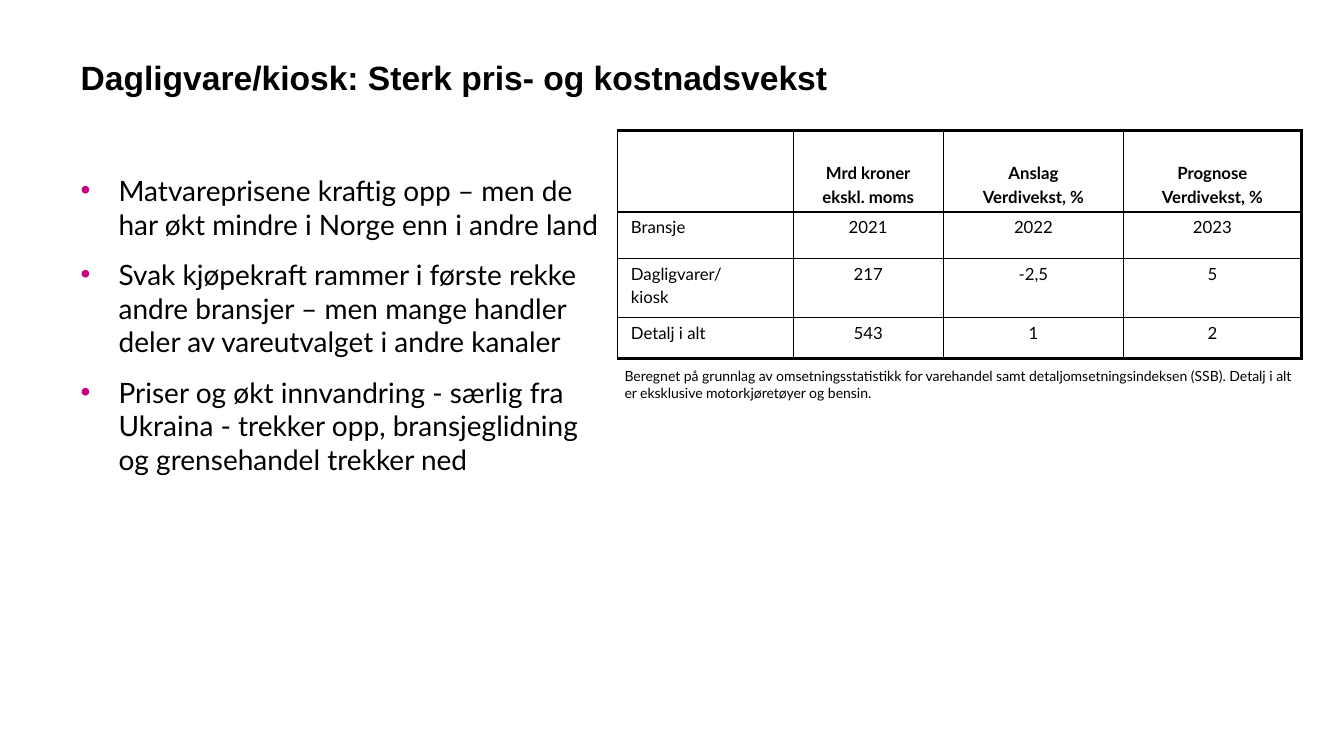
from dataclasses import dataclass

from lxml.etree import SubElement
from pptx import Presentation
from pptx.dml.color import RGBColor
from pptx.enum.text import MSO_ANCHOR as Anchor, MSO_AUTO_SIZE as AutoSize, PP_ALIGN as Align
from pptx.oxml.ns import qn
from pptx.slide import Slide
from pptx.table import _Cell as Cell
from pptx.text.text import TextFrame, _Paragraph as Paragraph
from pptx.util import Cm, Pt


@dataclass(frozen=True)
class Theme:
    ink: str = "000000"
    accent: str = "C9007F"
    heading_font: str = "Arial"
    body_font: str = "Lato"
    title_size: float = 24
    bullet_size: float = 20
    table_size: float = 12
    note_size: float = 10
    thin: float = 1
    thick: float = 2.25


@dataclass(frozen=True)
class Box:
    left: float
    top: float
    width: float
    height: float

    def lengths(self) -> tuple[Cm, Cm, Cm, Cm]:
        return Cm(self.left), Cm(self.top), Cm(self.width), Cm(self.height)


@dataclass(frozen=True)
class TableRow:
    height: float
    cells: tuple[str, ...]


THEME = Theme()
TITLE_BOX = Box(2.03, 0.61, 29.21, 2.51)
BULLET_BOX = Box(2.03, 3.07, 13.06, 14.2)
TABLE_BOX = Box(15.57, 3.28, 17.22, 5.75)
NOTE_BOX = Box(15.49, 9.14, 17.4, 1.12)

TITLE = "Dagligvare/kiosk: Sterk pris- og kostnadsvekst"
BULLETS = (
    "Matvareprisene kraftig opp – men de har økt mindre i Norge enn i andre land",
    "Svak kjøpekraft rammer i første rekke andre bransjer – men mange handler "
    "deler av vareutvalget i andre kanaler",
    "Priser og økt innvandring - særlig fra Ukraina - trekker opp, "
    "bransjeglidning og grensehandel trekker ned",
)
COLUMN_WIDTHS = (4.42, 3.78, 4.55, 4.47)
ROWS = (
    TableRow(2.06, ("", "Mrd kroner\nekskl. moms", "Anslag\nVerdivekst, %", "Prognose\nVerdivekst, %")),
    TableRow(1.17, ("Bransje", "2021", "2022", "2023")),
    TableRow(1.5, ("Dagligvarer/\nkiosk", "217", "-2,5", "5")),
    TableRow(1.02, ("Detalj i alt", "543", "1", "2")),
)
NOTE = (
    "Beregnet på grunnlag av omsetningsstatistikk for varehandel samt "
    "detaljomsetningsindeksen (SSB). Detalj i alt er eksklusive motorkjøretøyer og bensin."
)


def add_run(paragraph: Paragraph, text: str, size: float,
            font: str = THEME.body_font, bold: bool = False) -> None:
    run = paragraph.add_run()
    run.text = text
    run.font.name = font
    run.font.size = Pt(size)
    run.font.bold = bold
    run.font.color.rgb = RGBColor.from_string(THEME.ink)


def next_paragraph(frame: TextFrame, index: int) -> Paragraph:
    return frame.add_paragraph() if index else frame.paragraphs[0]


def set_margins(target: TextFrame | Cell, side: float, top: float, bottom: float) -> None:
    target.margin_left = target.margin_right = Cm(side)
    target.margin_top, target.margin_bottom = Cm(top), Cm(bottom)


def add_bullet_mark(paragraph: Paragraph) -> None:
    properties = paragraph._p.get_or_add_pPr()
    properties.set("marL", str(Cm(0.96)))
    properties.set("indent", str(-Cm(0.96)))
    colour = SubElement(properties, qn("a:buClr"))
    SubElement(colour, qn("a:srgbClr"), val=THEME.accent)
    SubElement(properties, qn("a:buFont"), typeface=THEME.heading_font)
    SubElement(properties, qn("a:buChar"), char="•")


def set_borders(cell: Cell, widths: dict[str, float]) -> None:
    properties = cell._tc.get_or_add_tcPr()
    for side in "LRTB":
        line = SubElement(properties, qn(f"a:ln{side}"), w=str(Pt(widths.get(side, THEME.thin))))
        fill = SubElement(line, qn("a:solidFill"))
        SubElement(fill, qn("a:srgbClr"), val=THEME.ink)


def draw_title(slide: Slide) -> None:
    title = slide.shapes.title
    title.left, title.top, title.width, title.height = TITLE_BOX.lengths()
    frame = title.text_frame
    frame.auto_size = AutoSize.NONE
    frame.vertical_anchor = Anchor.MIDDLE
    set_margins(frame, 0, 0, 0)
    heading = frame.paragraphs[0]
    heading.alignment = Align.LEFT
    heading.line_spacing = Pt(33)
    add_run(heading, TITLE, THEME.title_size, THEME.heading_font, bold=True)


def draw_bullets(slide: Slide) -> None:
    frame = slide.shapes.add_textbox(*BULLET_BOX.lengths()).text_frame
    frame.word_wrap = True
    set_margins(frame, 0, 1.3, 0)
    for index, text in enumerate(BULLETS):
        bullet = next_paragraph(frame, index)
        add_bullet_mark(bullet)
        bullet.space_before = Pt(6 if index else 0)
        bullet.space_after = Pt(6)
        add_run(bullet, text, THEME.bullet_size)


def fill_cell(cell: Cell, text: str, header: bool, centred: bool) -> None:
    set_margins(cell, 0.33, 0.13, 0.13)
    cell.vertical_anchor = Anchor.BOTTOM if header else Anchor.TOP
    cell.fill.background()
    for index, line in enumerate(text.splitlines()):
        paragraph = next_paragraph(cell.text_frame, index)
        paragraph.alignment = Align.CENTER if centred else Align.LEFT
        paragraph.space_before = Pt(2.4 if index else 0)
        add_run(paragraph, line, THEME.table_size, bold=header)


def draw_table(slide: Slide) -> None:
    table = slide.shapes.add_table(len(ROWS), len(COLUMN_WIDTHS), *TABLE_BOX.lengths()).table
    table.first_row = table.horz_banding = False
    for column, width in zip(table.columns, COLUMN_WIDTHS):
        column.width = Cm(width)
    last_row, last_column = len(ROWS) - 1, len(COLUMN_WIDTHS) - 1
    for r, row in enumerate(ROWS):
        table.rows[r].height = Cm(row.height)
        for c, text in enumerate(row.cells):
            edges = {"T": r == 0, "B": r == last_row, "R": c == last_column}
            cell = table.cell(r, c)
            set_borders(cell, {side: THEME.thick for side, outer in edges.items() if outer})
            fill_cell(cell, text, header=r == 0, centred=c > 0)


def draw_note(slide: Slide) -> None:
    frame = slide.shapes.add_textbox(*NOTE_BOX.lengths()).text_frame
    frame.word_wrap = True
    frame.auto_size = AutoSize.SHAPE_TO_FIT_TEXT
    add_run(frame.paragraphs[0], NOTE, THEME.note_size)


def main() -> None:
    deck = Presentation()
    deck.slide_width, deck.slide_height = Cm(33.87), Cm(19.05)
    slide = deck.slides.add_slide(deck.slide_layouts.get_by_name("Title Only"))
    draw_title(slide)
    draw_bullets(slide)
    draw_table(slide)
    draw_note(slide)
    deck.save("out.pptx")


if __name__ == "__main__":
    main()
